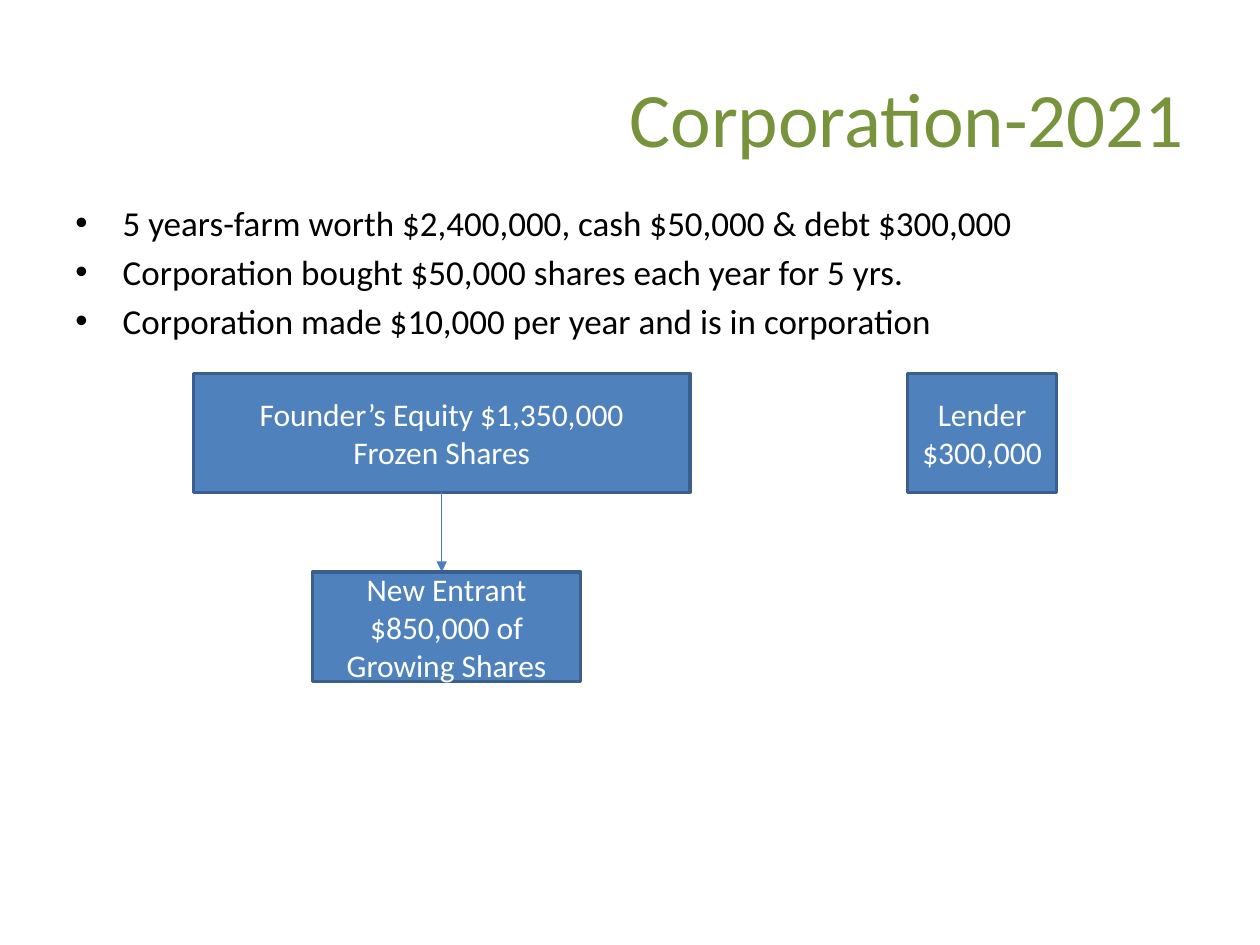
from typing import NamedTuple

from lxml.etree import SubElement
from pptx import Presentation
from pptx.dml.color import RGBColor
from pptx.enum.shapes import MSO_CONNECTOR, MSO_SHAPE
from pptx.enum.text import MSO_ANCHOR, PP_ALIGN
from pptx.oxml.ns import qn
from pptx.util import Pt

GREEN = RGBColor(0x77, 0x93, 0x3C)
BLACK = RGBColor(0, 0, 0)
WHITE = RGBColor(255, 255, 255)
BLUE = RGBColor(0x4F, 0x81, 0xBD)
NAVY = RGBColor(0x3A, 0x5F, 0x8C)
ARROW = RGBColor(0x4B, 0x7E, 0xBC)


class Area(NamedTuple):
    left: float
    top: float
    width: float
    height: float


class Style(NamedTuple):
    size: float
    color: RGBColor
    align: PP_ALIGN
    anchor: MSO_ANCHOR
    bullet: bool = False


class Party(NamedTuple):
    area: Area
    lines: list[str]


TITLE = Style(44, GREEN, PP_ALIGN.RIGHT, MSO_ANCHOR.MIDDLE)
BODY = Style(20, BLACK, PP_ALIGN.LEFT, MSO_ANCHOR.TOP, True)
LABEL = Style(18, WHITE, PP_ALIGN.CENTER, MSO_ANCHOR.MIDDLE)

INDENT = 27
ROW = 213.4
DEEP = 68
FACTS = [
    "5 years-farm worth $2,400,000, cash $50,000 & debt $300,000",
    "Corporation bought $50,000 shares each year for 5 yrs.",
    "Corporation made $10,000 per year and is in corporation",
]
FOUNDER = Party(Area(110.6, ROW, 283.6, DEEP),
                ["Founder’s Equity $1,350,000", "Frozen Shares"])
LENDER = Party(Area(518.6, ROW, 85.2, DEEP), ["Lender", "$300,000"])
ENTRANT = Party(Area(178.6, 326.8, 153.2, 62.6),
                ["New Entrant $850,000 of", "Growing Shares"])


def put_text(shape, lines: list[str], style: Style) -> None:
    frame = shape.text_frame
    frame.word_wrap = True
    frame.vertical_anchor = style.anchor
    looks = {"name": "Calibri", "size": Pt(style.size)}
    for i, line in enumerate(lines):
        para = frame.add_paragraph() if i else frame.paragraphs[0]
        para.alignment = style.align
        if style.bullet:
            para.space_before = Pt(style.size * 0.2 if i else 0)
            add_bullet(para)
        run = para.add_run()
        run.text = line
        for key, value in looks.items():
            setattr(run.font, key, value)
        run.font.color.rgb = style.color


def add_bullet(para) -> None:
    props = para._p.get_or_add_pPr()
    props.set("marL", str(Pt(INDENT)))
    props.set("indent", str(-Pt(INDENT)))
    SubElement(props, qn("a:buFont")).set("typeface", "Arial")
    SubElement(props, qn("a:buChar")).set("char", "•")


def add_text(slide, area: Area, lines: list[str], style: Style) -> None:
    put_text(slide.shapes.add_textbox(*map(Pt, area)), lines, style)


def add_party(slide, party: Party) -> None:
    box = slide.shapes.add_shape(MSO_SHAPE.RECTANGLE, *map(Pt, party.area))
    box.shadow.inherit = False
    box.fill.solid()
    box.fill.fore_color.rgb = BLUE
    box.line.color.rgb = NAVY
    box.line.width = Pt(2)
    put_text(box, party.lines, LABEL)


def add_arrow(slide, upper: Area, lower: Area) -> None:
    """Drop an arrow from the middle of the upper box to the lower one."""
    mid = upper.left + upper.width / 2
    ends = mid, upper.top + upper.height, mid, lower.top
    arrow = slide.shapes.add_connector(MSO_CONNECTOR.STRAIGHT, *map(Pt, ends))
    arrow.line.color.rgb = ARROW
    arrow.line.width = Pt(0.75)
    SubElement(arrow.line._get_or_add_ln(), qn("a:tailEnd")).set("type", "triangle")
    SubElement(arrow._element.spPr, qn("a:effectLst"))


def main() -> None:
    deck = Presentation()
    deck.slide_width, deck.slide_height = Pt(720), Pt(540)
    slide = deck.slides.add_slide(deck.slide_layouts[6])
    add_text(slide, Area(36, 21.6, 648, 90), ["Corporation-2021"], TITLE)
    add_text(slide, Area(36, 111.6, 648, 370.8), FACTS, BODY)
    add_party(slide, FOUNDER)
    add_party(slide, LENDER)
    add_arrow(slide, FOUNDER.area, ENTRANT.area)
    add_party(slide, ENTRANT)
    deck.save("out.pptx")


if __name__ == "__main__":
    main()
